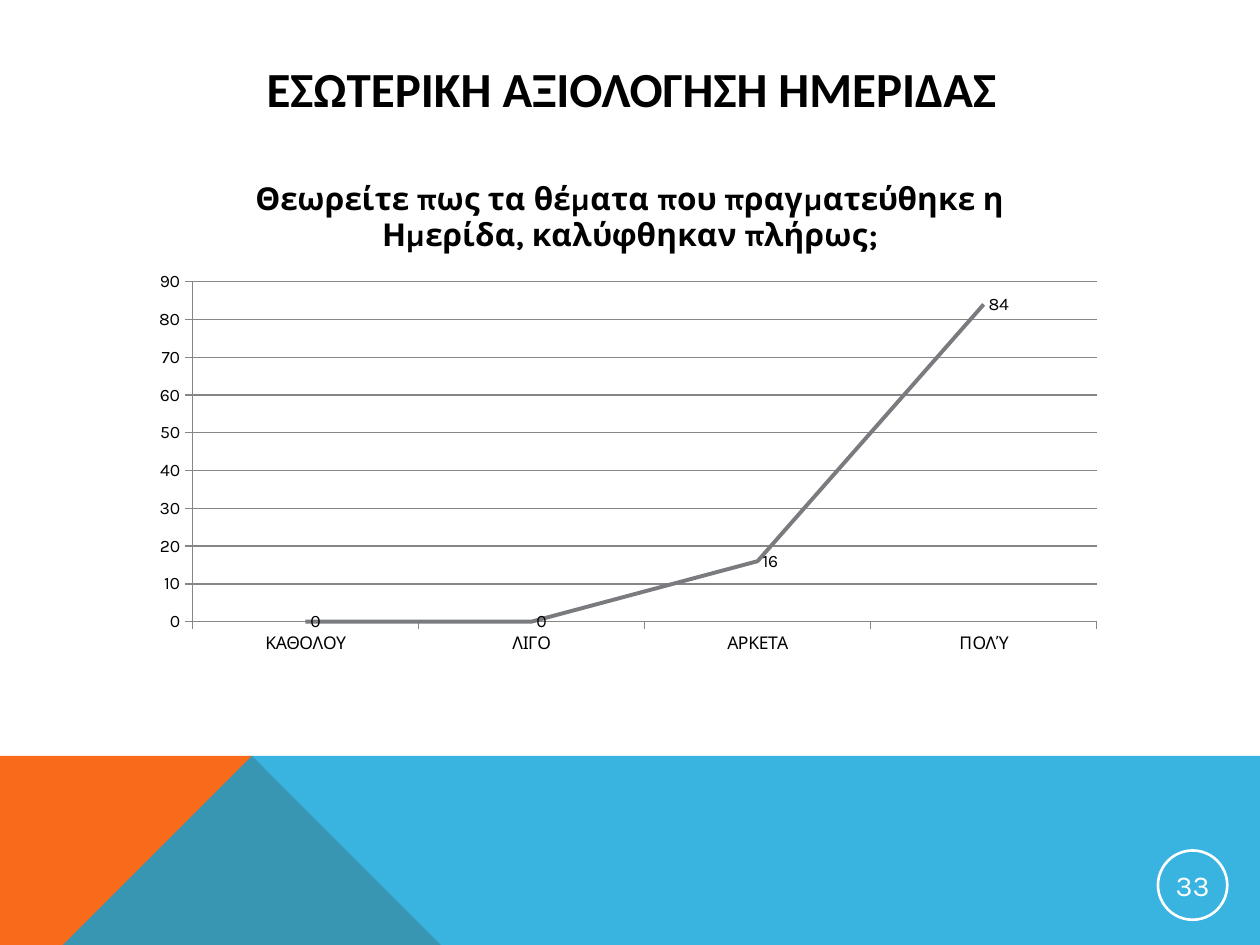
from lxml import etree
from pptx import Presentation
from pptx.chart.data import CategoryChartData
from pptx.dml.color import RGBColor
from pptx.enum.chart import XL_CHART_TYPE, XL_LABEL_POSITION, XL_MARKER_STYLE, XL_TICK_MARK
from pptx.enum.shapes import MSO_SHAPE
from pptx.enum.text import MSO_ANCHOR, PP_ALIGN
from pptx.oxml import parse_xml
from pptx.oxml.ns import nsdecls, qn
from pptx.util import Inches, Pt

LINE_CHART = XL_CHART_TYPE.LINE
LABEL_RIGHT = XL_LABEL_POSITION.RIGHT
NO_MARKER = XL_MARKER_STYLE.NONE
TICK_OUTSIDE = XL_TICK_MARK.OUTSIDE
OVAL = MSO_SHAPE.OVAL
MIDDLE = MSO_ANCHOR.MIDDLE
CENTER = PP_ALIGN.CENTER

WIDTH, HEIGHT = 10, 7.5
TITLE_FONT, BODY_FONT = "Calibri", "Karla"
BLACK, WHITE = "000000", "FFFFFF"
ORANGE, BLUE = "F96A1B", "08A1D9"
SERIES_GRAY, AXIS_GRAY = "797B7E", "868686"


def color(hex_code):
    return RGBColor.from_string(hex_code)


def format_font(font, size, name=BODY_FONT, hex_code=BLACK, bold=False):
    font.size, font.name, font.bold = Pt(size), name, bold
    font.color.rgb = color(hex_code)


def write_text(text_frame, text, margin=0.01, **font_format):
    """Centre one line of formatted text in a frame."""
    text_frame.word_wrap = True
    text_frame.vertical_anchor = MIDDLE
    text_frame.margin_left = text_frame.margin_right = Inches(margin)
    text_frame.margin_top = text_frame.margin_bottom = Inches(margin)
    paragraph = text_frame.paragraphs[0]
    paragraph.alignment = CENTER
    run = paragraph.add_run()
    run.text = text
    format_font(run.font, **font_format)


def format_line(line, hex_code, width):
    line.color.rgb = color(hex_code)
    line.width = Pt(width)


def add_polygon(slide, points, hex_code, opacity=100):
    builder = slide.shapes.build_freeform(*points[0], scale=Inches(1))
    builder.add_line_segments(points[1:], close=True)
    shape = builder.convert_to_shape()
    shape.shadow.inherit = False
    shape.fill.solid()
    shape.fill.fore_color.rgb = color(hex_code)
    shape.line.fill.background()
    if opacity < 100:
        fill_color = shape.fill._xPr.find(".//" + qn("a:srgbClr"))
        etree.SubElement(fill_color, qn("a:alpha"), val=str(opacity * 1000))


def add_footer_band(slide, left, top, width, height):
    """An orange triangle under a translucent blue band with a shared peak."""
    right, bottom = left + width, top + height
    peak = (left + 0.223 * width, top)
    corner = (left, bottom)
    add_polygon(slide, [corner, (left, top), peak, (left + 0.391 * width, bottom)], ORANGE)
    add_polygon(slide, [corner, peak, (right, top), (right, bottom)], BLUE, opacity=80)


def add_title(slide, left, top, width, height, text):
    title = slide.shapes.title
    title.left, title.top = Inches(left), Inches(top)
    title.width, title.height = Inches(width), Inches(height)
    write_text(title.text_frame, text, size=28, name=TITLE_FONT, bold=True)


def add_page_number(slide, left, top, diameter, number):
    badge = slide.shapes.add_shape(
        OVAL, Inches(left), Inches(top), Inches(diameter), Inches(diameter))
    badge.shadow.inherit = False
    badge.fill.background()
    format_line(badge.line, WHITE, 1.5)
    write_text(badge.text_frame, number, size=16.5, hex_code=WHITE)


def place_plot(chart, **shares):
    """Fix the inner plot area, given as shares of the chart."""
    plot_area = chart._chartSpace.find(".//" + qn("c:plotArea"))
    for layout in plot_area.findall(qn("c:layout")):
        plot_area.remove(layout)
    values = "".join(f'<c:{key} val="{share}"/>' for key, share in shares.items())
    plot_area.insert(0, parse_xml(
        f'<c:layout {nsdecls("c")}><c:manualLayout><c:layoutTarget val="inner"/>'
        '<c:xMode val="edge"/><c:yMode val="edge"/>'
        f'{values}</c:manualLayout></c:layout>'))


def add_answer_chart(slide, left, top, width, height, question, answers):
    data = CategoryChartData()
    data.categories = list(answers)
    data.add_series("Series 1", list(answers.values()))
    chart = slide.shapes.add_chart(
        LINE_CHART, Inches(left), Inches(top), Inches(width), Inches(height), data).chart
    format_font(chart.font, 10)
    chart.has_legend = False

    # Question above the plot
    chart.has_title = True
    write_text(chart.chart_title.text_frame, question, size=18, bold=True)
    chart.chart_title.include_in_layout = False
    place_plot(chart, x=0.05, y=0.25, w=0.93, h=0.67)

    # Axes and gridlines
    for axis in (chart.category_axis, chart.value_axis):
        axis.major_tick_mark = TICK_OUTSIDE
        format_line(axis.format.line, AXIS_GRAY, 0.75)
    values = chart.value_axis
    values.minimum_scale, values.maximum_scale, values.major_unit = 0, 90, 10
    values.has_major_gridlines = True
    format_line(values.major_gridlines.format.line, AXIS_GRAY, 0.75)

    # Line and its value labels
    plot = chart.plots[0]
    plot.vary_by_categories = False
    series = plot.series[0]
    series.smooth = False
    series.marker.style = NO_MARKER
    format_line(series.format.line, SERIES_GRAY, 2.25)
    labels = series.data_labels
    labels.show_value = True
    labels.position = LABEL_RIGHT
    format_font(labels.font, 10)


def main():
    presentation = Presentation()
    presentation.slide_width, presentation.slide_height = Inches(WIDTH), Inches(HEIGHT)
    slide = presentation.slides.add_slide(presentation.slide_layouts[5])
    slide.background.fill.solid()
    slide.background.fill.fore_color.rgb = color(WHITE)

    band_top = 0.736 * HEIGHT
    add_footer_band(slide, 0, band_top, WIDTH, HEIGHT - band_top)
    add_title(slide, 0.09 * WIDTH, 0.4, 0.822 * WIDTH, 0.08 * HEIGHT,
              "ΕΣΩΤΕΡΙΚΗ ΑΞΙΟΛΟΓΗΣΗ ΗΜΕΡΙΔΑΣ")
    add_page_number(slide, 0.919 * WIDTH, 0.9 * HEIGHT, 0.55, "33")
    add_answer_chart(
        slide, 0.114 * WIDTH, 0.164 * HEIGHT, 0.772 * WIDTH, 0.537 * HEIGHT,
        "Θεωρείτε πως τα θέματα που πραγματεύθηκε η Ημερίδα, καλύφθηκαν πλήρως;",
        {"ΚΑΘΟΛΟΥ": 0, "ΛΙΓΟ": 0, "ΑΡΚΕΤΑ": 16, "ΠΟΛΎ": 84})
    presentation.save("out.pptx")


if __name__ == "__main__":
    main()
